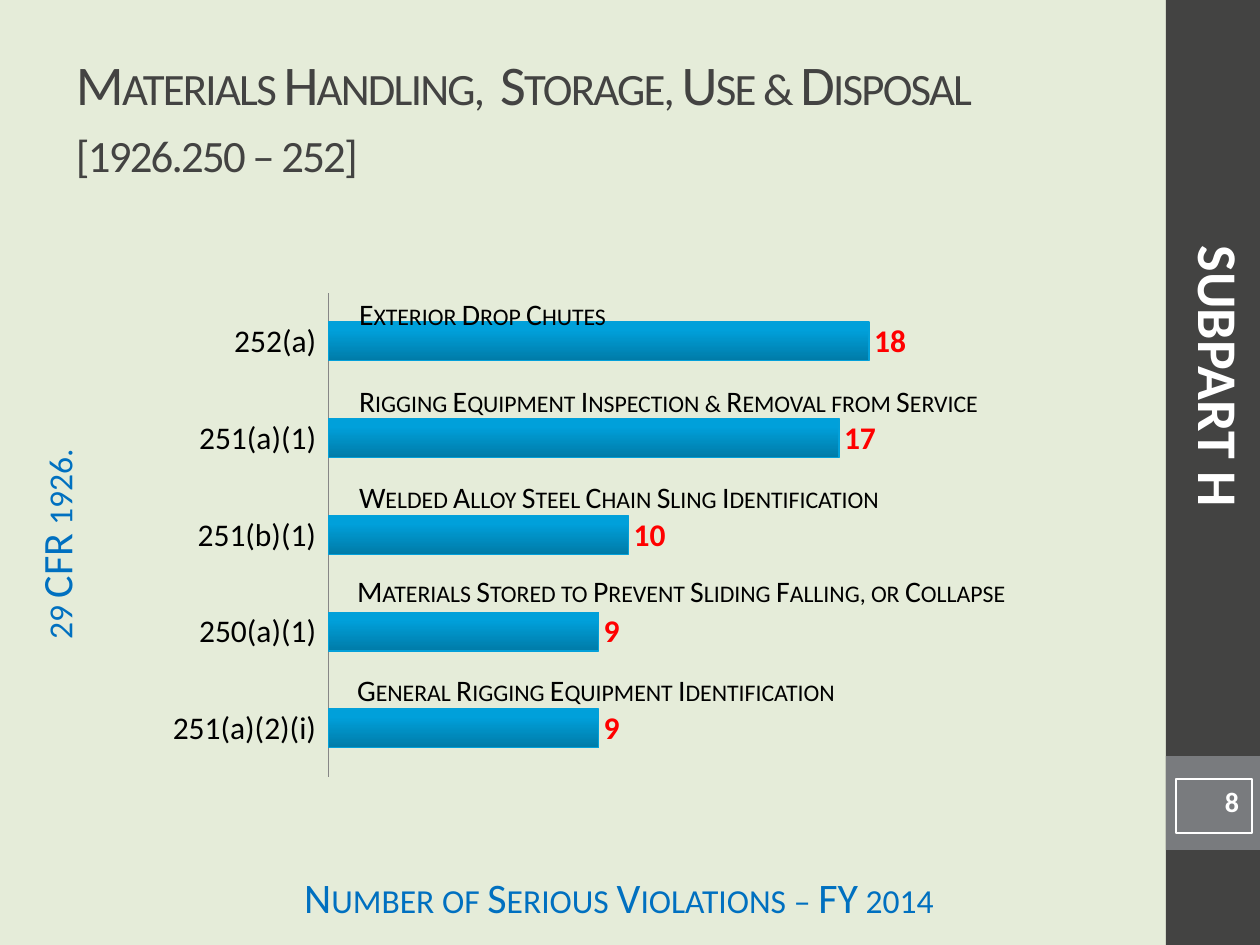
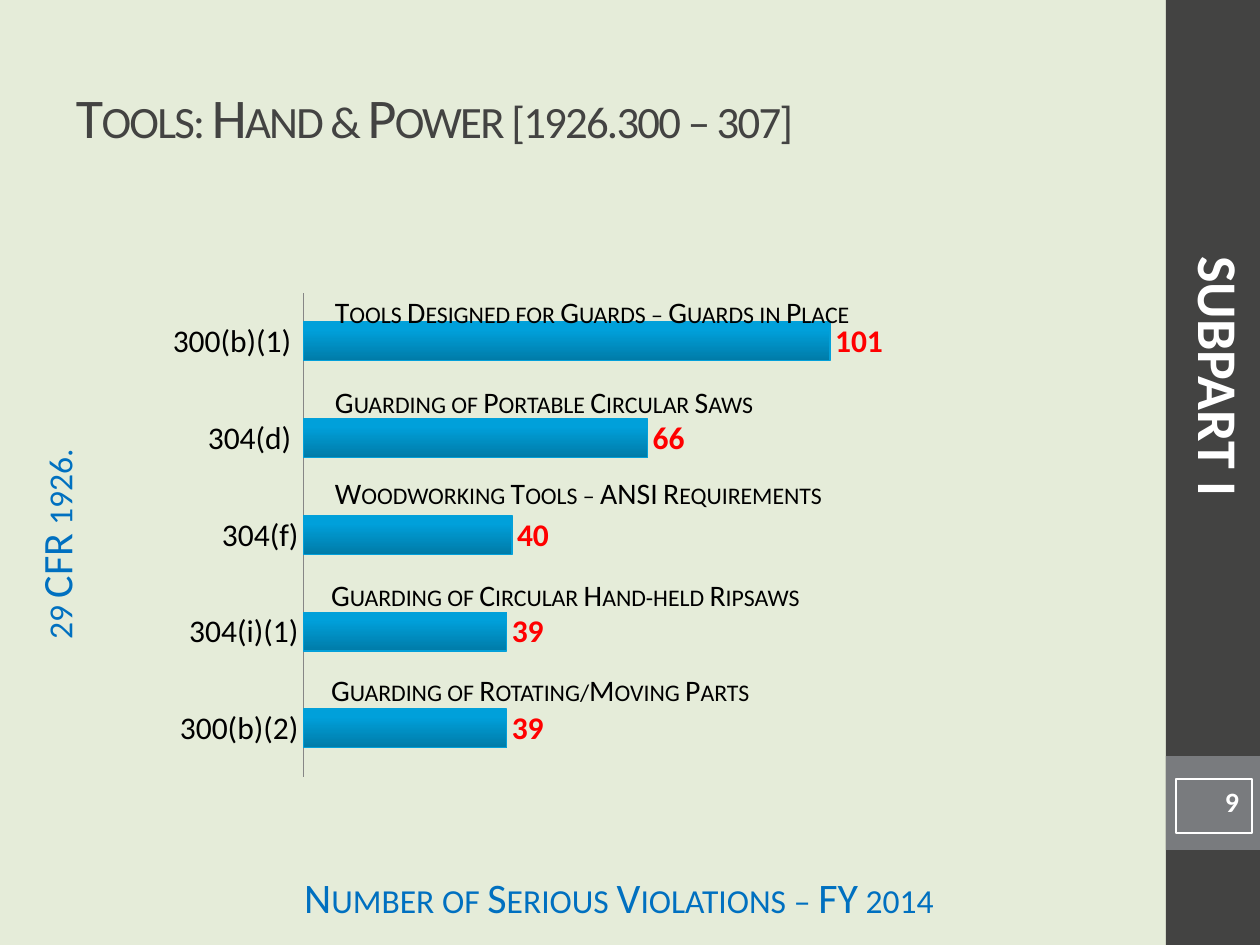
from lxml import etree
from pptx import Presentation
from pptx.chart.data import CategoryChartData
from pptx.dml.color import RGBColor
from pptx.enum.chart import XL_CHART_TYPE, XL_LABEL_POSITION, XL_TICK_MARK
from pptx.enum.shapes import MSO_SHAPE
from pptx.enum.text import MSO_ANCHOR, MSO_AUTO_SIZE, PP_ALIGN
from pptx.util import Emu, Pt

BAR = XL_CHART_TYPE.BAR_CLUSTERED
OUTSIDE = XL_LABEL_POSITION.OUTSIDE_END
NO_TICK = XL_TICK_MARK.NONE
RECT = MSO_SHAPE.RECTANGLE
TOP, MIDDLE = MSO_ANCHOR.TOP, MSO_ANCHOR.MIDDLE
LEFT, CENTER, RIGHT = PP_ALIGN.LEFT, PP_ALIGN.CENTER, PP_ALIGN.RIGHT
FIXED = MSO_AUTO_SIZE.NONE

SCALE = 914400 / 126
FONT = "Calibri"
COLORS = {
    "page": "E5ECD9", "band": "434342", "tab": "797B7E", "white": "FFFFFF",
    "caption": "0070C0", "title": "434342", "text": "000000", "value": "FF0000",
    "bar_dark": "007BA8", "bar_light": "00A0DA", "bar_line": "03A0D9",
    "axis": "868686",
}
STYLES = {
    "title": {"size": 32, "color": "title", "caps": True, "spc": -100},
    "caption": {"size": 24, "color": "caption", "caps": True},
    "label": {"size": 17, "color": "text", "caps": True},
    "subpart": {"size": 32, "color": "white", "bold": True},
    "number": {"size": 16, "color": "white", "bold": True},
    "category": {"size": 18, "color": "text"},
    "value": {"size": 18, "color": "value", "bold": True},
}

TITLE_BOX = (63, 38, 1050, 157)
BAND_BOX = (1166, 0, 94, 945)
CHART_BOX = (157, 283, 788, 504)
FOOTER_BOX = (262, 872, 714, 42)
SIDE_BOX = (-197, 508, 528, 73)

SLIDES = [
    {
        "title": "Materials Handling,  Storage, Use & Disposal\v[1926.250 – 252]",
        "subpart": "SUBPART H", "number": 8, "axis_max": 20,
        "bars": [("251(a)(2)(i) ", 9), ("250(a)(1) ", 9), ("251(b)(1) ", 10),
                 ("251(a)(1) ", 17), ("252(a) ", 18)],
        "labels": [
            (202, 13, "Exterior Drop Chutes"),
            (202, 100, "Rigging Equipment Inspection & Removal from Service"),
            (202, 196, "Welded Alloy Steel Chain Sling Identification"),
            (200, 290, "Materials Stored to Prevent Sliding Falling, or Collapse"),
            (200, 389, "General Rigging Equipment Identification"),
        ],
    },
    {
        "title": "Tools: Hand & Power [1926.300 – 307]",
        "subpart": "SUBPART I", "number": 9, "axis_max": 120,
        "bars": [("300(b)(2)", 39), ("304(i)(1)", 39), ("304(f)", 40),
                 ("304(d) ", 66), ("300(b)(1) ", 101)],
        "labels": [
            (178, 11, "Tools Designed for Guards – Guards in Place"),
            (178, 101, "Guarding of Portable Circular Saws"),
            (178, 192, "Woodworking Tools – ANSI Requirements"),
            (174, 294, "Guarding of Circular Hand-held Ripsaws"),
            (174, 389, "Guarding of Rotating/Moving Parts"),
        ],
    },
]


def px(*values):
    """Turn px lengths into EMU."""
    return [Emu(round(v * SCALE)) for v in values]


def rgb(name):
    """Look up a colour by name."""
    return RGBColor.from_string(COLORS[name])


def style_font(font, style):
    """Apply a named style to a font."""
    fmt = STYLES[style]
    values = {"name": FONT, "size": Pt(fmt["size"]), "bold": fmt.get("bold", False)}
    for key, value in values.items():
        setattr(font, key, value)
    font.color.rgb = rgb(fmt["color"])


def write(shape, text, style, align=LEFT, anchor=TOP, insets=(13, 6, 13, 6)):
    """Put styled text into a shape."""
    tf = shape.text_frame
    left, top, right, bottom = px(*insets)
    frame = {"word_wrap": True, "auto_size": FIXED, "vertical_anchor": anchor,
             "margin_left": left, "margin_top": top,
             "margin_right": right, "margin_bottom": bottom}
    for key, value in frame.items():
        setattr(tf, key, value)
    p = tf.paragraphs[0]
    p.text = text
    p.alignment = align
    for r in p.runs:
        style_font(r.font, style)
        rPr = r._r.get_or_add_rPr()
        if STYLES[style].get("caps"):
            rPr.set("cap", "small")
        if "spc" in STYLES[style]:
            rPr.set("spc", str(STYLES[style]["spc"]))


def add_text(s, box, text, style, rotation=0, **layout):
    """Add a text box, rotated about its centre."""
    sp = s.shapes.add_textbox(*px(*box))
    sp.rotation = rotation
    write(sp, text, style, **layout)


def add_rect(s, box, fill=None, line=None):
    """Add a flat rectangle with an optional fill and outline."""
    sp = s.shapes.add_shape(RECT, *px(*box))
    sp.shadow.inherit = False
    if fill:
        sp.fill.solid()
        sp.fill.fore_color.rgb = rgb(fill)
    else:
        sp.fill.background()
    if line:
        sp.line.color.rgb = rgb(line)
        sp.line.width = Pt(1.5)
    else:
        sp.line.fill.background()
    return sp


def add_title(s, box, text):
    """Place and fill the title placeholder."""
    sp = s.shapes.title
    for key, value in zip(("left", "top", "width", "height"), px(*box)):
        setattr(sp, key, value)
    write(sp, text, "title", anchor=MIDDLE)


def add_band(s, box, subpart, number):
    """Draw the right band with the subpart name and slide number."""
    x, y, w, h = box
    add_rect(s, box, fill="band")
    add_rect(s, (x, y + 756, w, 94), fill="tab")
    frame = add_rect(s, (x + 10, y + 779, 76, 54), line="white")
    write(frame, str(number), "number", align=RIGHT)
    add_text(s, (x - 323, y + 336, 753, 81), subpart, "subpart", 90, align=CENTER)


def add_captions(s):
    """Add the captions below and beside the chart."""
    insets = (13, 0, 13, 6)
    add_text(s, FOOTER_BOX, "Number of Serious Violations – FY 2014", "caption",
             align=CENTER, insets=insets)
    add_text(s, SIDE_BOX, "29 CFR 1926.", "caption", 270, align=CENTER, insets=insets)


def add_violations_chart(s, box, bars, axis_max):
    """Draw the bar chart of violations."""
    data = CategoryChartData()
    data.categories = [name for name, _ in bars]
    data.add_series("Series 1", [count for _, count in bars])
    chart = s.shapes.add_chart(BAR, *px(*box), data).chart
    chart.has_legend = chart.has_title = False
    style_font(chart.font, "category")

    axis = chart.category_axis
    axis.major_tick_mark = axis.minor_tick_mark = NO_TICK
    axis.format.line.color.rgb = rgb("axis")
    style_font(axis.tick_labels.font, "category")
    scale = {"visible": False, "has_major_gridlines": False,
             "minimum_scale": 0, "maximum_scale": axis_max}
    for key, value in scale.items():
        setattr(chart.value_axis, key, value)

    plot = chart.plots[0]
    for key, value in {"gap_width": 150, "overlap": -25, "vary_by_categories": False,
                       "has_data_labels": True}.items():
        setattr(plot, key, value)
    plot.data_labels.show_value = True
    plot.data_labels.position = OUTSIDE
    style_font(plot.data_labels.font, "value")

    bar = plot.series[0].format
    bar.fill.gradient()
    bar.fill.gradient_angle = 90
    for stop, color, position in zip(bar.fill.gradient_stops,
                                     ("bar_dark", "bar_light"), (0, 0.8)):
        stop.color.rgb = rgb(color)
        stop.position = position
    bar.line.color.rgb = rgb("bar_line")
    bar.line.width = Pt(0.75)


def add_bar_labels(s, box, labels):
    """Write the description above each bar, offset from the chart box."""
    x, y = box[:2]
    for dx, dy, text in labels:
        add_text(s, (x + dx, y + dy, 760, 36), text, "label", insets=(0, 0, 0, 0))


def add_violations_slide(prs, content):
    """Build one subpart slide."""
    s = prs.slides.add_slide(prs.slide_layouts[5])
    add_band(s, BAND_BOX, content["subpart"], content["number"])
    add_captions(s)
    add_title(s, TITLE_BOX, content["title"])
    add_violations_chart(s, CHART_BOX, content["bars"], content["axis_max"])
    add_bar_labels(s, CHART_BOX, content["labels"])


def main():
    """Build and save the presentation."""
    prs = Presentation()
    prs.slide_width, prs.slide_height = px(1260, 945)
    fill = prs.slide_master.background.fill
    fill.solid()
    fill.fore_color.rgb = rgb("page")
    for content in SLIDES:
        add_violations_slide(prs, content)
    prs.save("out.pptx")


if __name__ == "__main__":
    main()
